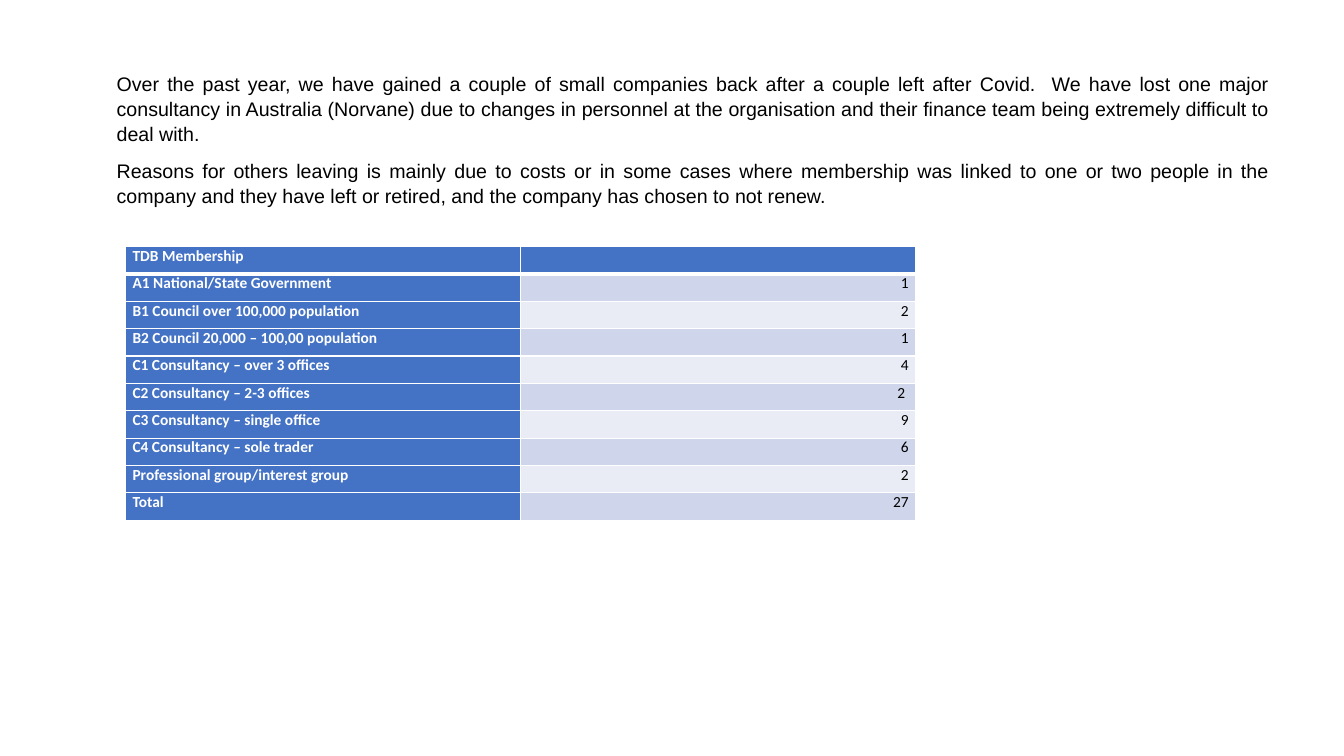
from lxml.etree import SubElement
from pptx import Presentation
from pptx.dml.color import RGBColor
from pptx.enum.text import MSO_AUTO_SIZE, PP_ALIGN
from pptx.oxml.ns import qn
from pptx.util import Cm, Pt

BLUE, WHITE, BLACK = "4472C4", "FFFFFF", "000000"
BANDS = ("CFD5EA", "E9EBF5")

REMARKS = (
    "Over the past year, we have gained a couple of small companies back after "
    "a couple left after Covid.  We have lost one major consultancy in Australia "
    "(Norvane) due to changes in personnel at the organisation and their finance "
    "team being extremely difficult to deal with.",
    "Reasons for others leaving is mainly due to costs or in some cases where "
    "membership was linked to one or two people in the company and they have left "
    "or retired, and the company has chosen to not renew.",
)

MEMBERSHIP = (
    ("TDB Membership", ""),
    ("A1 National/State Government", "1"),
    ("B1 Council over 100,000 population", "2"),
    ("B2 Council 20,000 – 100,00 population", "1"),
    ("C1 Consultancy – over 3 offices", "4"),
    ("C2 Consultancy – 2-3 offices", "2 "),
    ("C3 Consultancy – single office", "9"),
    ("C4 Consultancy – sole trader", "6"),
    ("Professional group/interest group", "2"),
    ("Total", "27"),
)


def color(value):
    return RGBColor.from_string(value)


def add_span(para, text, font, size, ink, bold=False):
    span = para.add_run()
    span.text = text
    span.font.name = font
    span.font.size = Pt(size)
    span.font.bold = bold
    span.font.color.rgb = color(ink)


def add_remarks(page, left, top, width, height):
    box = page.shapes.add_textbox(left, top, width, height)
    frame = box.text_frame
    frame.word_wrap = True
    frame.auto_size = MSO_AUTO_SIZE.SHAPE_TO_FIT_TEXT
    for index, text in enumerate(REMARKS):
        para = frame.add_paragraph() if index else frame.paragraphs[0]
        para.alignment = PP_ALIGN.JUSTIFY
        para.line_spacing = 1.07
        para.space_after = Pt(8)
        add_span(para, text, "Arial", 14, BLACK)


def set_borders(cell, bottom, top):
    properties = cell._tc.get_or_add_tcPr()
    widths = {"a:lnL": 1, "a:lnR": 1, "a:lnT": top, "a:lnB": bottom}
    for position, (side, width) in enumerate(widths.items()):
        line = properties.makeelement(qn(side), {"w": str(Pt(width))})
        fill = SubElement(line, qn("a:solidFill"))
        SubElement(fill, qn("a:srgbClr"), val=WHITE)
        properties.insert(position, line)


def fill_cell(cell, text, row, column):
    cell.margin_left = cell.margin_right = Cm(0.18)
    cell.margin_top = cell.margin_bottom = 0
    heading = row == 0 or column == 0
    cell.fill.solid()
    cell.fill.fore_color.rgb = color(BLUE if heading else BANDS[(row - 1) % 2])
    set_borders(cell, bottom=3 if row == 0 else 1, top=3 if row == 1 else 1)
    para = cell.text_frame.paragraphs[0]
    para.alignment = PP_ALIGN.RIGHT if column else PP_ALIGN.JUSTIFY
    if text:
        add_span(para, text, "Calibri", 11, WHITE if heading else BLACK, heading)
    else:
        SubElement(para._p, qn("a:endParaRPr"), sz="1100")


def add_membership(page, left, top, width, height):
    frame = page.shapes.add_table(len(MEMBERSHIP), 2, left, top, width, height)
    table = frame.table
    for column in table.columns:
        column.width = width // 2
    for row, texts in enumerate(MEMBERSHIP):
        table.rows[row].height = height // len(MEMBERSHIP)
        for column, text in enumerate(texts):
            fill_cell(table.cell(row, column), text, row, column)


def main():
    deck = Presentation()
    deck.slide_width, deck.slide_height = Cm(33.87), Cm(19.05)
    page = deck.slides.add_slide(deck.slide_layouts[6])
    add_remarks(page, Cm(2.69), Cm(1.65), Cm(29.57), Cm(17.78))
    add_membership(page, Cm(3.16), Cm(6.21), Cm(19.92), Cm(6.9))
    deck.save("out.pptx")


if __name__ == "__main__":
    main()
